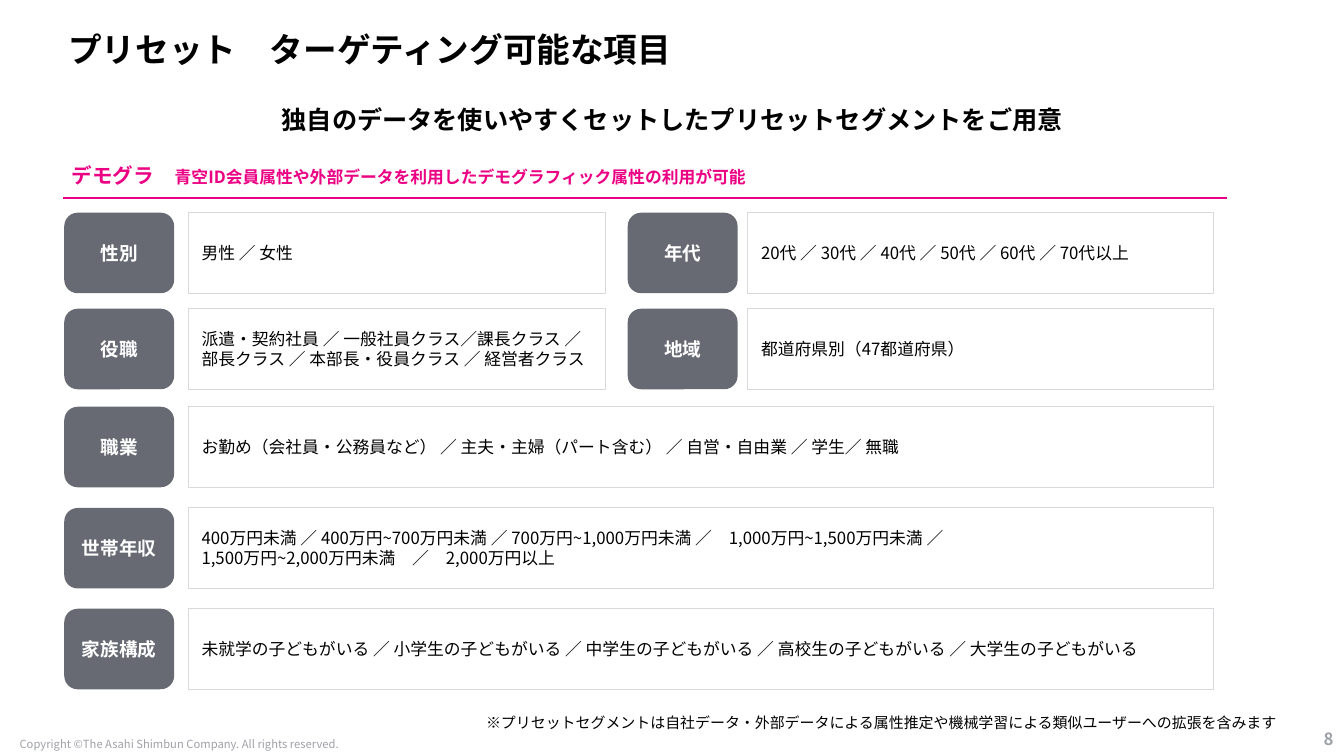
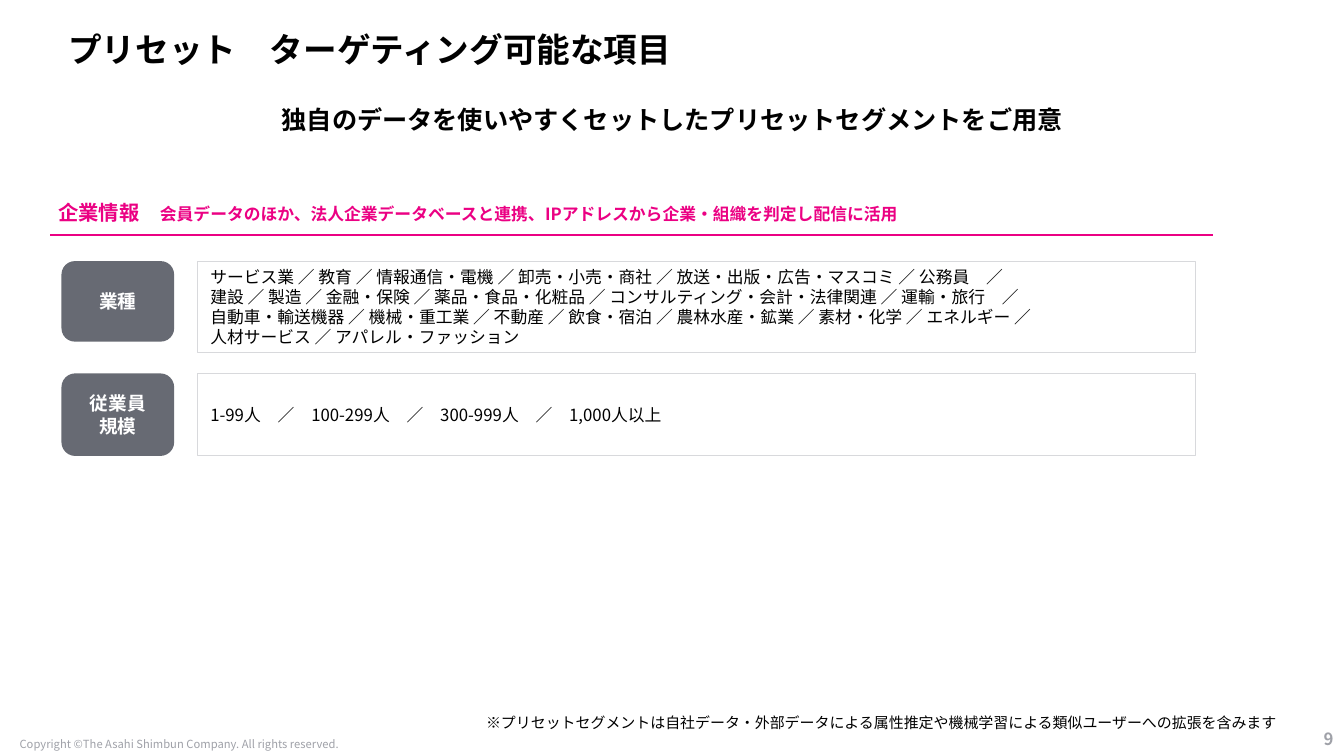
import pptx
import pptx.util
import pptx.dml.color
import pptx.enum.shapes
import pptx.enum.text
import pptx.oxml.ns
from lxml import etree

Cm, Pt = pptx.util.Cm, pptx.util.Pt
ALIGN = pptx.enum.text.PP_ALIGN
ANCHOR = pptx.enum.text.MSO_ANCHOR
SHAPE = pptx.enum.shapes.MSO_SHAPE
qn = pptx.oxml.ns.qn

FONT = "Noto Sans CJK JP"
COLORS = {"ink": "000000", "accent": "EB0083", "label": "676A73",
          "border": "D8D9DC", "muted": "9FA1A8", "white": "FFFFFF"}
PAD = 0.33

TITLE = "プリセット　ターゲティング可能な項目"
LEAD = "独自のデータを使いやすくセットしたプリセットセグメントをご用意"
NOTE = ("※プリセットセグメントは自社データ・外部データによる属性推定や"
        "機械学習による類似ユーザーへの拡張を含みます")
COPYRIGHT = "Copyright ©The Asahi Shimbun Company. All rights reserved."


def rgb(name):
    return pptx.dml.color.RGBColor.from_string(COLORS[name])


def add_run(p, text, size=12, color="ink", bold=False):
    r = p.add_run()
    r.text = text
    r.font.size, r.font.bold, r.font.name = Pt(size), bold, FONT
    r.font.color.rgb = rgb(color)
    etree.SubElement(r.font._element, qn("a:ea")).set("typeface", FONT)


def write(sp, text, align=ALIGN.LEFT, anchor=ANCHOR.TOP, pad=None,
          spacing=None, **font):
    """Write one paragraph per line of text into a shape."""
    tf = sp.text_frame
    tf.word_wrap = True
    tf.auto_size = pptx.enum.text.MSO_AUTO_SIZE.NONE
    tf.vertical_anchor = anchor
    if pad is not None:
        tf.margin_left = tf.margin_right = Cm(pad)
        tf.margin_top = tf.margin_bottom = Cm(pad)
    for i, line in enumerate(text.split("\n")):
        p = tf.add_paragraph() if i else tf.paragraphs[0]
        p.alignment = align
        if spacing:
            p.line_spacing = spacing
        add_run(p, line, **font)


class Deck:
    """Holds the style and the current slide."""

    def __init__(self):
        self.prs = pptx.Presentation()
        self.prs.slide_width, self.prs.slide_height = Cm(33.87), Cm(19.05)
        self.s = None

    def text(self, text, x, y, w, h, **style):
        sp = self.s.shapes.add_textbox(Cm(x), Cm(y), Cm(w), Cm(h))
        write(sp, text, **style)
        return sp

    def placeholder(self, sp, text, x, y, w, h, **style):
        sp.left, sp.top, sp.width, sp.height = Cm(x), Cm(y), Cm(w), Cm(h)
        write(sp, text, bold=True, **style)

    def master_footer(self):
        """Move the copyright line to the master, so every slide shows it."""
        sp = self.text(COPYRIGHT, 0.23, 18.54, 8.59, 0.43, size=8,
                       color="muted", align=ALIGN.CENTER, anchor=ANCHOR.MIDDLE)
        sp._element.nvSpPr.cNvPr.set("id", "20")
        self.prs.slide_master.element.cSld.spTree.append(sp._element)

    def slide(self, number):
        first = self.s is None
        self.s = self.prs.slides.add_slide(self.prs.slide_layouts[1])
        if first:
            self.master_footer()
        title, body = self.s.placeholders
        self.placeholder(title, TITLE, 1.47, 0.71, 25.3, 1.19, size=24,
                         anchor=ANCHOR.MIDDLE, spacing=0.9)
        self.placeholder(body, LEAD, 0.94, 2.62, 32, 2.31, size=18,
                         align=ALIGN.CENTER, spacing=0.85)
        # Lead line without bullet or indent
        p = body.text_frame.paragraphs[0]
        p.space_before = Pt(0)
        pPr = p._p.get_or_add_pPr()
        pPr.set("marL", "0")
        pPr.set("indent", "0")
        etree.SubElement(pPr, qn("a:buNone"))
        # Footnote and page number
        self.text(NOTE, 11.79, 17.53, 21.49, 1.12, pad=0.46, size=10.7)
        self.text(str(number), 31.88, 18.21, 1.98, 0.84, size=12, bold=True,
                  color="muted", align=ALIGN.RIGHT, anchor=ANCHOR.MIDDLE)

    def heading(self, name, detail, x, y, size):
        """Section name and detail above a rule."""
        sp = self.text(name + "　", x, y, 24.5, 2, pad=PAD, size=size,
                       color="accent", bold=True)
        add_run(sp.text_frame.paragraphs[0], detail, color="accent", bold=True)
        left, top = x + 0.13, y + 1.2
        line = self.s.shapes.add_connector(
            pptx.enum.shapes.MSO_CONNECTOR.STRAIGHT,
            Cm(left), Cm(top), Cm(left + 29.31), Cm(top))
        line.line.color.rgb = rgb("accent")
        line.line.width = Pt(1.5)
        etree.SubElement(line._element.spPr, qn("a:effectLst"))

    def block(self, kind, text, x, y, w, h, fill, border=None, **style):
        sp = self.s.shapes.add_shape(kind, Cm(x), Cm(y), Cm(w), Cm(h))
        sp.shadow.inherit = False
        sp.fill.solid()
        sp.fill.fore_color.rgb = rgb(fill)
        if border:
            sp.line.color.rgb = rgb(border)
            sp.line.width = Pt(0.75)
        else:
            sp.line.fill.background()
        write(sp, text, anchor=ANCHOR.MIDDLE, pad=PAD, **style)

    def item(self, label, values, y, columns, h=2.03, label_h=2.03):
        """Grey label with a box of values to its right."""
        x, w, box_x, box_w = columns
        self.block(SHAPE.ROUNDED_RECTANGLE, label, x, y, w, label_h, "label",
                   size=13.3, color="white", bold=True, align=ALIGN.CENTER)
        self.block(SHAPE.RECTANGLE, values, box_x, y, box_w, h,
                   "white", "border")


def main():
    deck = Deck()

    # Demographic items: (x, width) of label, then of box
    left = (1.62, 2.77, 4.75, 10.52)
    right = (15.82, 2.77, 18.85, 11.74)
    wide = (1.62, 2.77, 4.75, 25.83)
    deck.slide(8)
    deck.heading("デモグラ", "青空ID会員属性や外部データを利用した"
                 "デモグラフィック属性の利用が可能", 1.47, 3.78, 14.7)
    for label, values, y, columns in [
        ("性別", "男性 ／ 女性", 5.36, left),
        ("年代", "20代 ／ 30代 ／ 40代 ／ 50代 ／ 60代 ／ 70代以上",
         5.36, right),
        ("役職", "派遣・契約社員 ／ 一般社員クラス／課長クラス ／ "
         "部長クラス ／ 本部長・役員クラス ／ 経営者クラス", 7.78, left),
        ("地域", "都道府県別（47都道府県）", 7.78, right),
        ("職業", "お勤め（会社員・公務員など） ／ 主夫・主婦（パート含む） ／ "
         "自営・自由業 ／ 学生／ 無職", 10.25, wide),
        ("世帯年収", "400万円未満 ／ 400万円~700万円未満 ／ "
         "700万円~1,000万円未満 ／　1,000万円~1,500万円未満 ／\n"
         "1,500万円~2,000万円未満　／　2,000万円以上", 12.8, wide),
        ("家族構成", "未就学の子どもがいる ／ 小学生の子どもがいる ／ "
         "中学生の子どもがいる ／ 高校生の子どもがいる ／ "
         "大学生の子どもがいる", 15.34, wide),
    ]:
        deck.item(label, values, y, columns)

    # Company items
    company = (1.55, 2.84, 4.97, 25.15)
    deck.slide(9)
    deck.heading("企業情報", "会員データのほか、法人企業データベースと連携、"
                 "IPアドレスから企業・組織を判定し配信に活用", 1.14, 4.72, 14.5)
    deck.item("業種", "サービス業 ／ 教育 ／ 情報通信・電機 ／ 卸売・小売・商社 ／ "
              "放送・出版・広告・マスコミ ／ 公務員　／\n"
              "建設 ／ 製造 ／ 金融・保険 ／ 薬品・食品・化粧品 ／ "
              "コンサルティング・会計・法律関連 ／ 運輸・旅行　／\n"
              "自動車・輸送機器 ／ 機械・重工業 ／ 不動産 ／ 飲食・宿泊 ／ "
              "農林水産・鉱業 ／ 素材・化学 ／ エネルギー ／\n"
              "人材サービス ／ アパレル・ファッション", 6.58, company, h=2.31)
    deck.item("従業員\n規模", "1-99人　／　100-299人　／　300-999人　／　1,000人以上",
              9.41, company, h=2.08, label_h=2.08)

    deck.prs.save("out.pptx")


if __name__ == "__main__":
    main()
